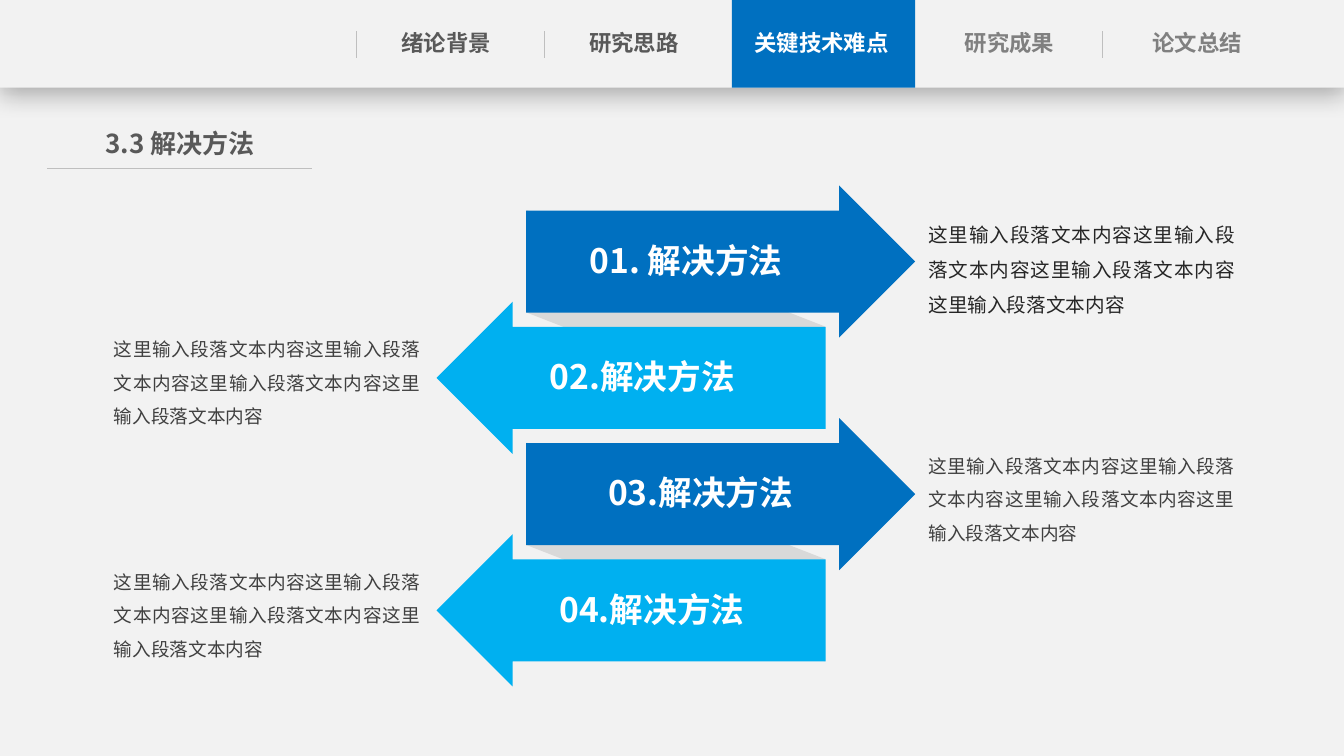
from lxml import etree
from pptx import Presentation
from pptx.dml.color import RGBColor
from pptx.enum.shapes import MSO_CONNECTOR, MSO_SHAPE
from pptx.enum.text import MSO_ANCHOR, MSO_AUTO_SIZE, PP_ALIGN
from pptx.oxml.ns import qn
from pptx.util import Inches, Pt

WIDE, HIGH = Inches(13.333), Inches(7.5)
FONT = "Noto Sans CJK SC"
RECT, ARROW, SLANT = MSO_SHAPE.RECTANGLE, MSO_SHAPE.RIGHT_ARROW, MSO_SHAPE.PARALLELOGRAM
LINE = MSO_CONNECTOR.STRAIGHT
MID, EVEN = PP_ALIGN.CENTER, PP_ALIGN.JUSTIFY
TOP, GROW = MSO_ANCHOR.TOP, MSO_AUTO_SIZE.SHAPE_TO_FIT_TEXT

HUES = {
    "back": "F2F2F2", "blue": "0070C0", "sky": "00B0F0", "shade": "D9D9D9",
    "rule": "BFBFBF", "white": "FFFFFF", "dark": "595959", "dim": "808080",
    "ink": "262626", "gray": "404040", "black": "000000",
}
TABS = [
    ("绪论背景", "dark"), ("研究思路", "dark"), ("关键技术难点", "white"),
    ("研究成果", "dim"), ("论文总结", "dim"),
]
NOTE = "这里输入段落文本内容" * 4
STEPS = [
    ("01. 解决方法", 20.63, 14, "ink"),
    ("02.解决方法", 20.4, 13.3, "gray"),
    ("03.解决方法", 22.8, 13.3, "gray"),
    ("04.解决方法", 21.83, 13.3, "gray"),
]
SIDES = [
    {"arrow": 39.15, "label": 40.73, "note": 69.08, "hue": "blue", "turn": 0},
    {"arrow": 32.48, "label": 37.58, "note": 8.48, "hue": "sky", "turn": 180},
]
FIRST, PITCH = 24.53, 15.38


def hue(name):
    return RGBColor.from_string(HUES[name])


def apply(item, values):
    for key, value in values.items():
        setattr(item, key, value)


def place(x, y, w, h):
    return int(WIDE * x / 100), int(HIGH * y / 100), int(WIDE * w / 100), int(HIGH * h / 100)


def block(slide, kind, area, fill, adjust=(), turn=0):
    shape = slide.shapes.add_shape(kind, *place(*area))
    shape.shadow.inherit = False
    shape.fill.solid()
    shape.fill.fore_color.rgb = hue(fill)
    shape.line.fill.background()
    shape.rotation = turn
    for index, value in enumerate(adjust):
        shape.adjustments[index] = value
    return shape


def cast(shape):
    effects = shape._element.spPr.find(qn("a:effectLst"))
    outer = etree.SubElement(
        effects, qn("a:outerShdw"), blurRad=str(Pt(18)), dist=str(Pt(4)),
        dir="5400000", algn="t", rotWithShape="0")
    tint = etree.SubElement(outer, qn("a:srgbClr"), val=HUES["black"])
    etree.SubElement(tint, qn("a:alpha"), val="29000")


def rule(slide, x, y, end, foot):
    line = slide.shapes.add_connector(LINE, *place(x, y, end, foot))
    line.line.color.rgb = hue("rule")
    line.line.width = Pt(0.5)
    etree.SubElement(line._element.spPr, qn("a:effectLst"))


def write(shape, text, size, tint, bold=True, align=MID, space=1.0, pad=0):
    frame = shape.text_frame
    apply(frame, {
        "word_wrap": True, "auto_size": GROW, "vertical_anchor": TOP,
        "margin_left": 0, "margin_right": 0,
        "margin_top": Inches(pad), "margin_bottom": Inches(pad),
    })
    para = frame.paragraphs[0]
    apply(para, {"alignment": align, "line_spacing": space})
    run = para.add_run()
    run.text = text
    apply(run.font, {"size": Pt(size), "bold": bold, "name": FONT})
    run.font.color.rgb = hue(tint)
    etree.SubElement(run.font._element, qn("a:ea"), typeface=FONT)


def label(slide, area, *args, **kinds):
    write(slide.shapes.add_textbox(*place(*area)), *args, **kinds)


def header(slide):
    cast(block(slide, RECT, (0, 0, 100, 11.6), "back"))
    block(slide, RECT, (54.45, 0, 13.65, 11.6), "blue")
    for x in (26.48, 40.5, 82.05):
        rule(slide, x, 4.13, x, 7.73)
    for col, (text, tint) in enumerate(TABS):
        label(slide, (27.68 + 13.97 * col, 3.2, 11.03, 5.07), text, 16, tint, pad=0.05)


def title(slide, text):
    head = slide.shapes.title
    spot = place(5.63, 16.13, 15.53, 5.6)
    apply(head, dict(zip(("left", "top", "width", "height"), spot)))
    write(head, text, 18.6, "dark", pad=0.05)
    rule(slide, 3.53, 22.27, 23.18, 22.27)


def steps(slide):
    for row in (2, 0):
        block(slide, SLANT, (42.15, 22.53 + PITCH * row, 16.28, 39.47), "shade", [0.532], 270)
    for row, (text, wide, size, tint) in enumerate(STEPS):
        side = SIDES[row % 2]
        y = FIRST + PITCH * row
        block(slide, ARROW, (side["arrow"], y, 28.95, 20.13), side["hue"], [0.67, 0.5], side["turn"])
        label(slide, (side["label"], y + 7.2, wide, 5.33), text, 24, "white")
        label(slide, (side["note"], y + 3.35, 22.8, size), NOTE, size, tint,
              bold=False, align=EVEN, space=1.5)


def main():
    deck = Presentation()
    apply(deck, {"slide_width": WIDE, "slide_height": HIGH})
    slide = deck.slides.add_slide(deck.slide_layouts[5])
    slide.background.fill.solid()
    slide.background.fill.fore_color.rgb = hue("back")
    header(slide)
    title(slide, "3.3 解决方法")
    steps(slide)
    deck.save("out.pptx")


if __name__ == "__main__":
    main()
